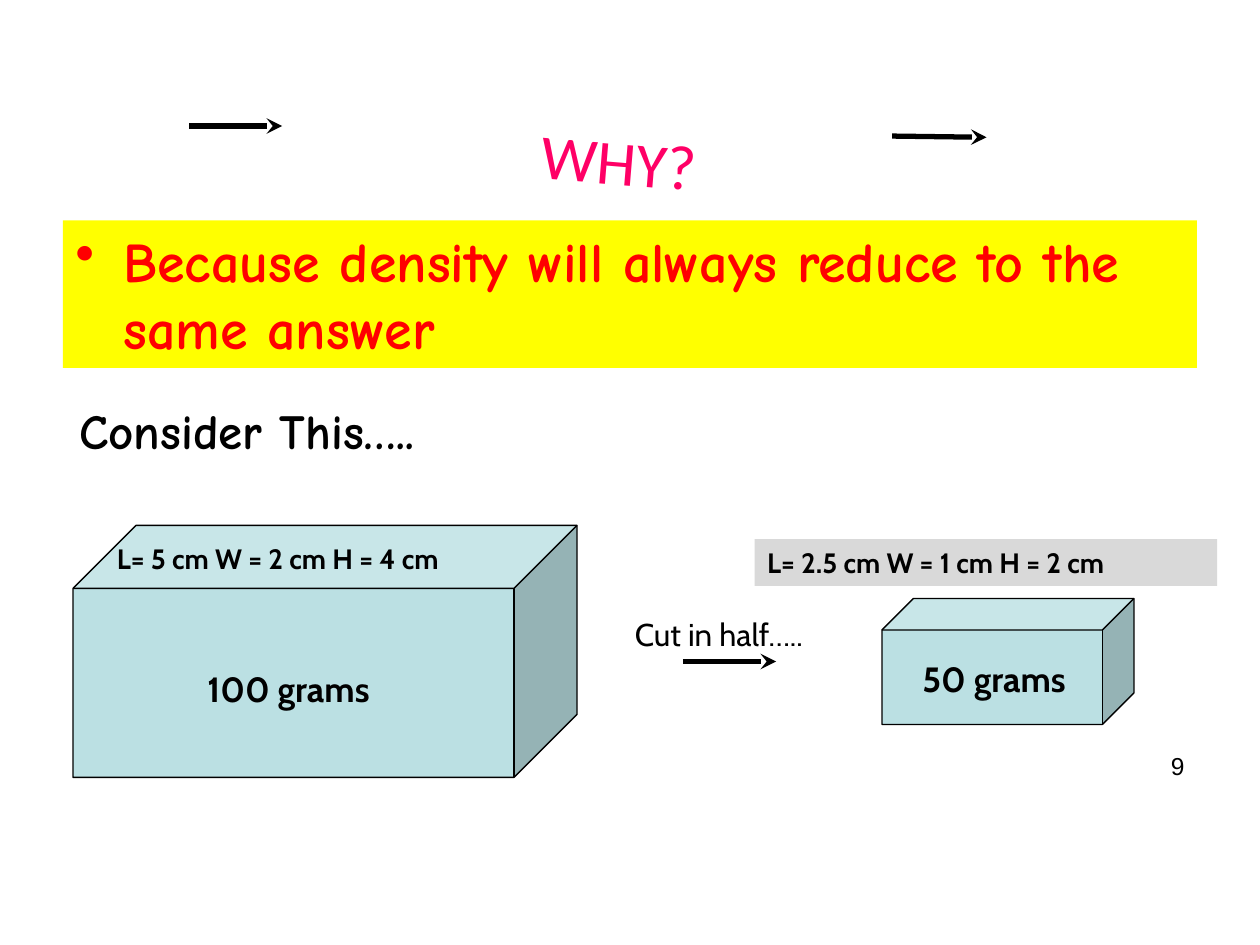
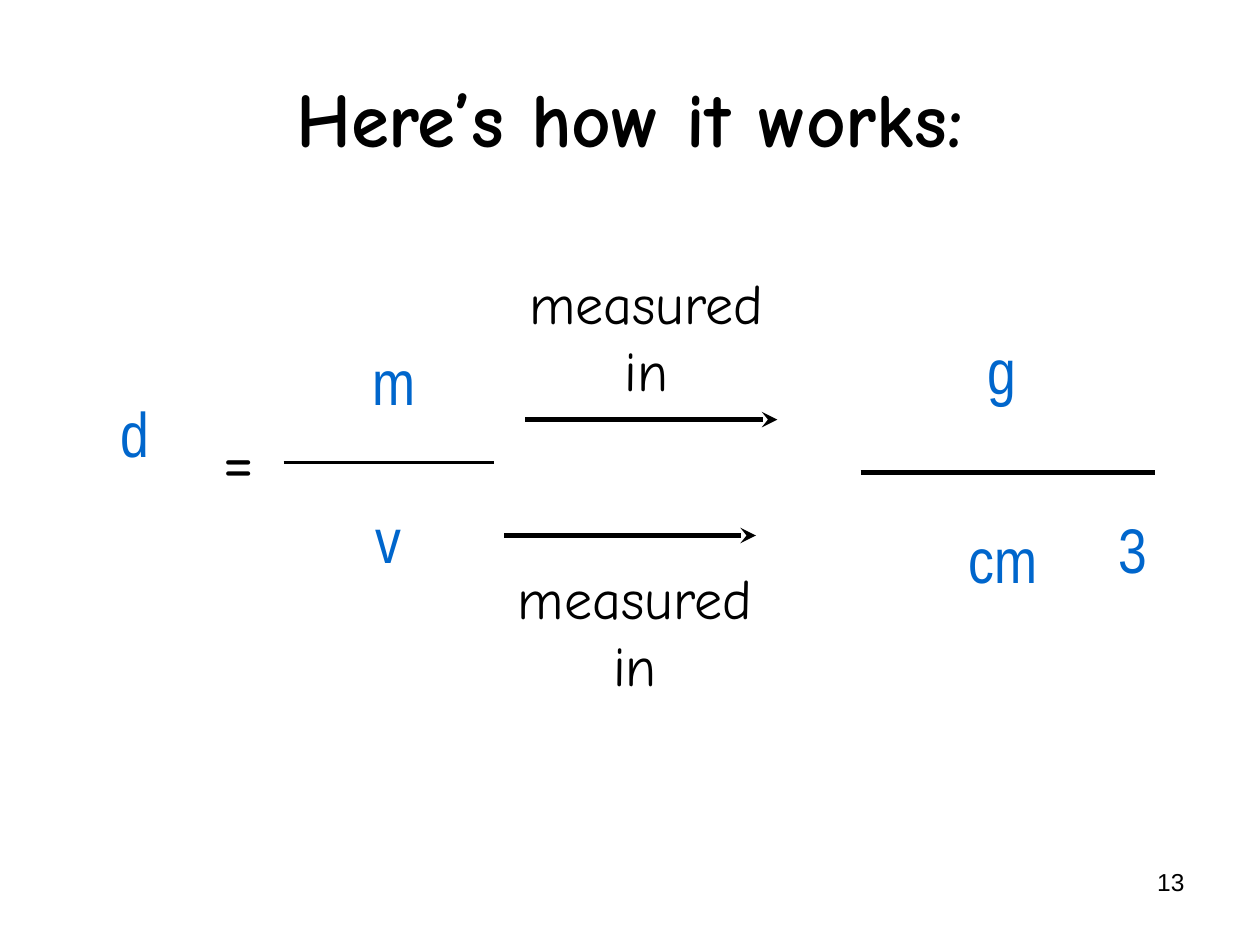
from dataclasses import dataclass
from typing import Optional

from lxml import etree
from pptx import Presentation
from pptx.dml.color import RGBColor
from pptx.enum.shapes import MSO_CONNECTOR, MSO_SHAPE
from pptx.enum.text import MSO_ANCHOR, MSO_AUTO_SIZE, PP_ALIGN
from pptx.oxml.ns import qn
from pptx.util import Inches, Pt

LEFT, CENTER, RIGHT = PP_ALIGN.LEFT, PP_ALIGN.CENTER, PP_ALIGN.RIGHT
TOP, MIDDLE = MSO_ANCHOR.TOP, MSO_ANCHOR.MIDDLE
GROW, FIXED = MSO_AUTO_SIZE.SHAPE_TO_FIT_TEXT, MSO_AUTO_SIZE.NONE
CUBE, STRAIGHT = MSO_SHAPE.CUBE, MSO_CONNECTOR.STRAIGHT

BLACK = RGBColor(0x00, 0x00, 0x00)
WHITE = RGBColor(0xFF, 0xFF, 0xFF)
RED = RGBColor(0xFF, 0x00, 0x00)
PINK = RGBColor(0xFF, 0x00, 0x66)
YELLOW = RGBColor(0xFF, 0xFF, 0x00)
GREY = RGBColor(0xD9, 0xD9, 0xD9)
AQUA = RGBColor(0xBB, 0xE0, 0xE3)
BLUE = RGBColor(0x00, 0x66, 0xCC)
SKY = RGBColor(0x99, 0xCC, 0xFF)


@dataclass(frozen=True)
class Style:
    font: str
    size: float
    color: RGBColor = BLACK
    bold: bool = False
    align: PP_ALIGN = LEFT
    anchor: MSO_ANCHOR = TOP
    wrap: bool = True
    grow: bool = True
    edge: Optional[RGBColor] = None
    edge_pt: float = 0


@dataclass(frozen=True)
class Label:
    text: str
    left: float
    top: float
    width: float
    height: float
    style: Style
    fill: Optional[RGBColor] = None
    turn: float = 0
    bullet: bool = False


@dataclass(frozen=True)
class Stroke:
    left: float
    top: float
    width: float
    drop: float = 0
    weight: float = 3
    arrow: bool = True


@dataclass(frozen=True)
class Block:
    left: float
    top: float
    width: float
    height: float


# Text styles
TITLE = Style("Comic Neue", 44, bold=True, align=CENTER, anchor=MIDDLE, grow=False)
BODY = Style("Comic Neue", 32, RED, bold=True, grow=False)
LEAD = Style("Comic Neue", 28, bold=True)
NOTE = Style("Comic Neue", 32, align=CENTER)
EQUALS = Style("Comic Neue", 40)
MASS = Style("Cabin", 20, bold=True, align=CENTER)
SIDES = Style("Cabin", 16, bold=True)
CUT = Style("Cabin", 18, align=CENTER)
PAGE = Style("Arial", 14, align=RIGHT, grow=False)
WHY = Style("Calibri", 36, PINK, align=CENTER, wrap=False, grow=False,
            edge=BLACK, edge_pt=0.75)
TERM = Style("Arial Narrow", 36, BLUE, align=CENTER, wrap=False, grow=False,
             edge=SKY, edge_pt=1.5)


def set_all(target, values: dict) -> None:
    for name, value in values.items():
        setattr(target, name, value)


def add_edge(font_xml, color: RGBColor, points: float) -> None:
    edge = etree.Element(qn("a:ln"), w=str(int(Pt(points))))
    fill = etree.SubElement(edge, qn("a:solidFill"))
    etree.SubElement(fill, qn("a:srgbClr"), val=str(color))
    font_xml.insert(0, edge)


def add_bullet(para) -> None:
    props = para._p.get_or_add_pPr()
    props.set("marL", str(Inches(0.38)))
    props.set("indent", str(Inches(-0.38)))
    etree.SubElement(props, qn("a:buChar"), char="•")


def add_label(slide, label: Label) -> None:
    style = label.style
    box = slide.shapes.add_textbox(Inches(label.left), Inches(label.top),
                                   Inches(label.width), Inches(label.height))
    box.rotation = label.turn
    if label.fill is not None:
        box.fill.solid()
        box.fill.fore_color.rgb = label.fill
    set_all(box.text_frame, {
        "word_wrap": style.wrap,
        "auto_size": GROW if style.grow else FIXED,
        "vertical_anchor": style.anchor,
    })
    para = box.text_frame.paragraphs[0]
    para.alignment = style.align
    if label.bullet:
        add_bullet(para)
    run = para.add_run()
    run.text = label.text
    set_all(run.font, {"name": style.font, "size": Pt(style.size), "bold": style.bold})
    run.font.color.rgb = style.color
    if style.edge is not None:
        add_edge(run._r.get_or_add_rPr(), style.edge, style.edge_pt)


def add_stroke(slide, stroke: Stroke) -> None:
    line = slide.shapes.add_connector(
        STRAIGHT, Inches(stroke.left), Inches(stroke.top),
        Inches(stroke.left + stroke.width), Inches(stroke.top + stroke.drop))
    line.line.color.rgb = BLACK
    line.line.width = Pt(stroke.weight)
    if stroke.arrow:
        etree.SubElement(line.line._get_or_add_ln(), qn("a:tailEnd"), type="stealth")
    etree.SubElement(line._element.spPr, qn("a:effectLst"))


def add_block(slide, block: Block) -> None:
    cube = slide.shapes.add_shape(CUBE, Inches(block.left), Inches(block.top),
                                  Inches(block.width), Inches(block.height))
    cube.shadow.inherit = False
    cube.adjustments[0] = 0.25
    cube.fill.solid()
    cube.fill.fore_color.rgb = AQUA
    cube.line.color.rgb = BLACK
    cube.line.width = Pt(0.75)


def add_page(deck, number: int, foot: float, parts: list) -> None:
    slide = deck.slides.add_slide(deck.slide_layouts[6])
    slide.background.fill.solid()
    slide.background.fill.fore_color.rgb = WHITE
    draw = {Label: add_label, Stroke: add_stroke, Block: add_block}
    for part in [Label(str(number), 7.17, foot, 2.33, 0.52, PAGE), *parts]:
        draw[type(part)](slide, part)


# Why density stays the same
HALVES = [
    Label("Because density will always reduce to the same answer",
          0.5, 1.75, 9, 1.17, BODY, fill=YELLOW, bullet=True),
    Label("WHY?", 2.92, 0.92, 4, 0.5, WHY, turn=4.8),
    Label("Consider This…..", 0.53, 3.13, 3.42, 0.57, LEAD),
    Stroke(1.5, 1, 0.74),
    Stroke(7.08, 1.08, 0.75, drop=0.01),
    Block(0.58, 4.17, 4, 2),
    Block(7, 4.75, 2, 1),
    Label("100 grams", 1.33, 5.25, 1.92, 0.44, MASS),
    Stroke(5.42, 5.25, 0.74),
    Label("Cut in half…..", 4.58, 4.83, 2.25, 0.4, CUT),
    Label("L= 5 cm W = 2 cm H = 4 cm", 0.83, 4.25, 3.5, 0.37, SIDES),
    Label("L= 2.5 cm W = 1 cm H = 2 cm", 5.99, 4.28, 3.67, 0.37, SIDES, fill=GREY),
    Label("50 grams", 6.93, 5.17, 1.92, 0.44, MASS),
]

# The formula and its units
UNITS = [
    Label("Here’s how it works:", 0.5, 0.3, 9, 1.25, TITLE),
    Label("d", 0.67, 3.08, 0.8, 1.08, TERM),
    Label("=", 1.67, 3.25, 0.58, 0.77, EQUALS),
    Label("m", 2.5, 2.67, 1.25, 0.81, TERM),
    Stroke(2.25, 3.67, 1.67, weight=2, arrow=False),
    Label("v", 2.67, 3.92, 0.83, 0.83, TERM),
    *(Label("measured in", left, top, 2.42, 1.17, NOTE)
      for left, top in ((3.92, 2.08), (3.83, 4.42))),
    Stroke(4.17, 3.33, 2),
    Stroke(4, 4.25, 2),
    Label("g", 7.33, 2.58, 1.25, 0.81, TERM),
    Stroke(6.83, 3.75, 2.34, arrow=False),
    Label("cm", 7.17, 4.08, 1.58, 0.83, TERM),
    Label("3", 8.83, 4, 0.33, 0.56, TERM),
]


def main() -> None:
    deck = Presentation()
    set_all(deck, {"slide_width": Inches(10), "slide_height": Inches(7.5)})
    add_page(deck, 9, 5.91, HALVES)
    add_page(deck, 13, 6.83, UNITS)
    deck.save("out.pptx")


if __name__ == "__main__":
    main()
